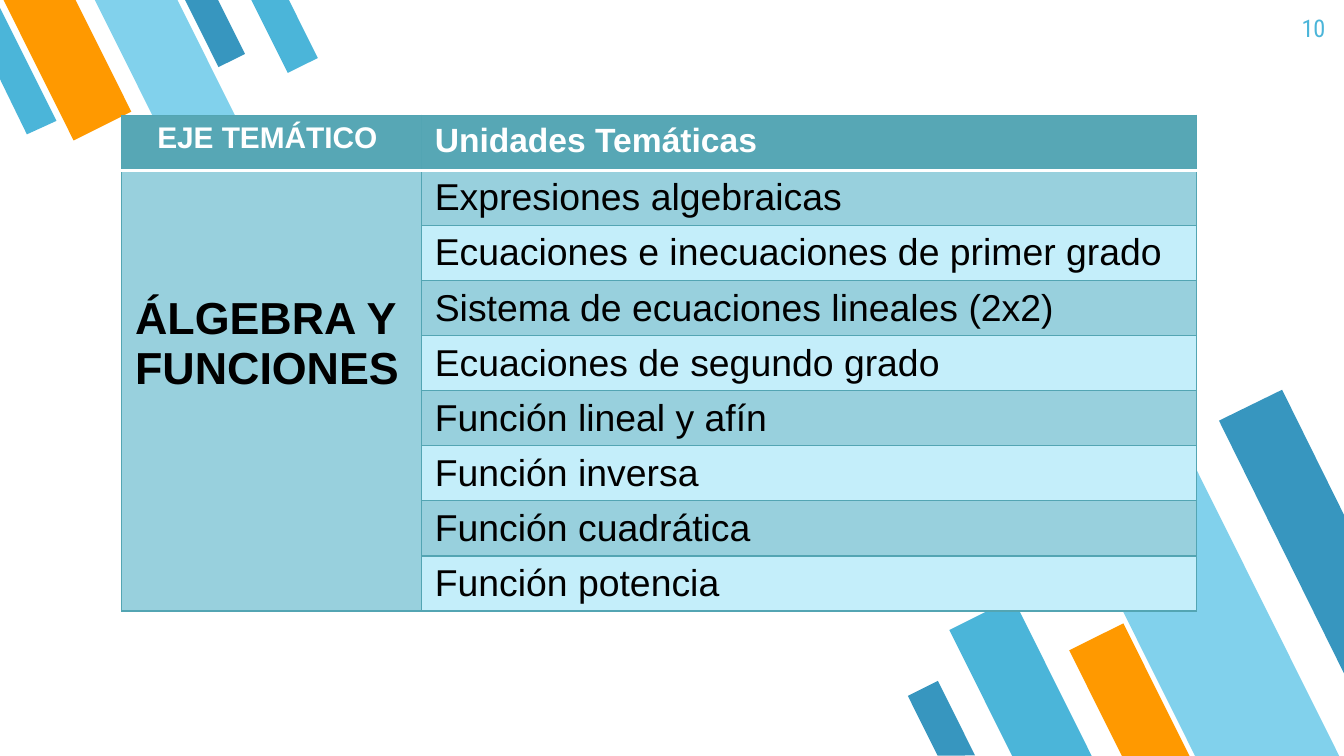
"""Build a slide with a table of algebra units between two groups of slanted bars."""
from lxml import etree
from pptx import Presentation, util as u
from pptx.dml.color import RGBColor
from pptx.enum import shapes as sh, text as tx
from pptx.oxml.ns import qn

hues = {"sky": "4BB5D9", "pale": "81D1EC", "gold": "FF9900", "deep": "3796BF",
        "head": "57A7B5", "edge": "53A5B3", "dark": "98D0DD", "light": "C4EEFA",
        "white": "FFFFFF", "black": "000000"}

deck = Presentation()
deck.slide_width = u.Inches(10)
deck.slide_height = deck.slide_width * 9 // 16
unit = deck.slide_width / 100
page = deck.slides.add_slide(deck.slide_layouts[6])


def paint(item, hue):
    item.fill.solid()
    item.fill.fore_color.rgb = RGBColor.from_string(hues[hue])


def write(frame, words, hue, align, **form):
    line = frame.paragraphs[0]
    line.alignment = align
    run = line.add_run()
    run.text = words
    run.font.color.rgb = RGBColor.from_string(hues[hue])
    for key, value in form.items():
        setattr(run.font, key, value)


bars = [(73.3, 45, 5.3, 13.2, 153.5, "sky"), (85.3, 35.9, 9.6, 23.9, 153.5, "pale"),
        (81.8, 46.8, 4.5, 11.1, 153.5, "gold"), (68.8, 50.9, 2.5, 6.2, 153.5, "deep"),
        (14.9, -0.8, 2.2, 5.6, 333.5, "deep"), (2.6, -1.8, 4.8, 11.8, 333.5, "gold"),
        (9.8, -2, 5.5, 13.7, 333.5, "pale"), (19.9, -1, 2.5, 6.2, 333.5, "sky")]
for *box, turn, hue in bars:
    bar = page.shapes.add_shape(sh.MSO_SHAPE.FLOWCHART_MANUAL_INPUT,
                                *(round(n * unit) for n in box))
    bar.rotation = turn
    bar._element.spPr.xfrm.set("flipH", "1")
    bar.shadow.inherit = False
    bar.line.fill.background()
    paint(bar, hue)

cuts = [("deep", [(954, 290), (907, 313), (1000, 501), (1000, 383)]),
        ("sky", [(20, 100), (42, 90), (0, 6), (0, 59)])]
for hue, dots in cuts:
    pen = page.shapes.build_freeform(*dots[0], scale=unit / 10)
    pen.add_line_segments(dots[1:], close=True)
    cut = pen.convert_to_shape()
    cut.shadow.inherit = False
    cut.line.fill.background()
    paint(cut, hue)

note = page.shapes.add_textbox(*(round(n * unit) for n in (93.6, 0, 6, 4.3))).text_frame
note.word_wrap = True
for side in ("left", "right", "top", "bottom"):
    setattr(note, f"margin_{side}", round(unit))
write(note, "10", "sky", tx.PP_ALIGN.RIGHT, size=u.Pt(13), name="Roboto Condensed")

topics = ["Expresiones algebraicas", "Ecuaciones e inecuaciones de primer grado",
          "Sistema de ecuaciones lineales (2x2)", "Ecuaciones de segundo grado",
          "Función lineal y afín", "Función inversa", "Función cuadrática",
          "Función potencia"]
count, tall = len(topics) + 1, 4.1
grid = page.shapes.add_table(count, 2, *(round(n * unit) for n in
                                         (9.05, 8.58, 80, tall * count))).table
grid.first_row = grid.horz_banding = False
for col, wide in zip(grid.columns, (22.3, 57.7)):
    col.width = round(wide * unit)
for row in grid.rows:
    row.height = round(tall * unit)

for r in range(count):
    for c in range(2):
        cell = grid.cell(r, c)
        edges = {"L": ("edge", 0.75), "R": ("edge", 0.75),
                 "T": ("edge", 0.75), "B": ("edge", 0.75)}
        if r == 0:
            edges["B"] = ("white", 2)
        elif r == 1:
            edges["T"] = ("white", 2)
        prop = cell._tc.get_or_add_tcPr()
        for side, (hue, thick) in edges.items():
            rim = etree.SubElement(prop, qn(f"a:ln{side}"), w=str(u.Pt(thick)))
            fill = etree.SubElement(rim, qn("a:solidFill"))
            etree.SubElement(fill, qn("a:srgbClr"), val=hues[hue])
        paint(cell, "head" if r == 0 else "dark" if c == 0 or r % 2 else "light")
        cell.margin_bottom = round(0.2 * unit)
        if r > 1 and c == 0:
            cell.margin_top = cell.margin_bottom = 0

axis = grid.cell(1, 0)
axis.merge(grid.cell(count - 1, 0))
axis.margin_top = round(9.2 * unit)
left, mid = tx.PP_ALIGN.LEFT, tx.PP_ALIGN.CENTER
labels = [(0, 0, "EJE TEMÁTICO ", "white", mid, 16, True),
          (0, 1, "Unidades Temáticas", "white", left, 18, True),
          (1, 0, "ÁLGEBRA Y FUNCIONES", "black", left, 24, True)]
labels += [(r, 1, words, "black", left, 20, False) for r, words in enumerate(topics, 1)]
for r, c, words, hue, align, size, bold in labels:
    write(grid.cell(r, c).text_frame, words, hue, align,
          size=u.Pt(size), bold=bold, name="Arial")

deck.save("out.pptx")
